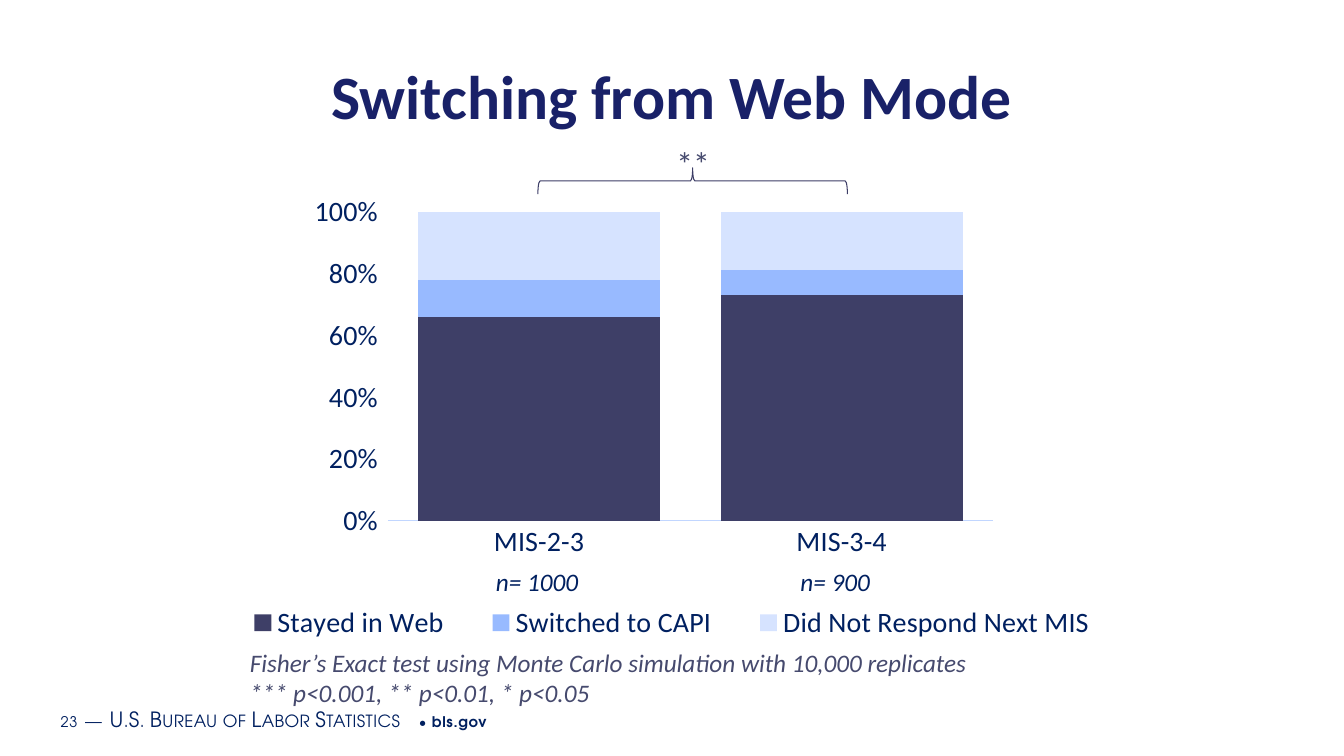
import pptx
import pptx.chart.data
import pptx.dml.color
import pptx.enum.chart
import pptx.enum.shapes
import pptx.enum.text
import pptx.oxml
import pptx.oxml.ns
import pptx.util

RGB = pptx.dml.color.RGBColor
WIDE, HIGH = pptx.util.Inches(13.33), pptx.util.Inches(7.5)
SANS, GEO = "Calibri", "TeX Gyre Adventor"
NAVY = RGB(0x00, 0x20, 0x60)
TITLE = RGB(0x19, 0x21, 0x68)
SLATE = RGB(0x46, 0x4A, 0x6E)
BRACE = RGB(0x3C, 0x3D, 0x66)
AXIS = RGB(0xC1, 0xD6, 0xFF)

CATS = ("MIS-2-3", "MIS-3-4")
SERIES = (
    ("Stayed in Web", (0.66, 0.73), RGB(0x3E, 0x3F, 0x67)),
    ("Switched to CAPI", (0.12, 0.08), RGB(0x98, 0xBA, 0xFF)),
    ("Did Not Respond Next MIS", (0.22, 0.19), RGB(0xD6, 0xE3, 0xFF)),
)


def place(x, y, w, h):
    """Turn percentages of the slide's size into lengths."""
    return (round(WIDE * x / 100), round(HIGH * y / 100),
            round(WIDE * w / 100), round(HIGH * h / 100))


def style(font, size, color=NAVY, face=SANS, bold=False, italic=False):
    font.size = pptx.util.Pt(size)
    font.name = face
    font.color.rgb = color
    font.bold = bold
    font.italic = italic


def write(para, text, small=False, space=0, **form):
    """Add a styled run for each line; small caps and spacing are optional."""
    for i, line in enumerate(text.split("\n")):
        if i:
            para.add_line_break()
        run = para.add_run()
        run.text = line
        style(run.font, **form)
        props = run._r.get_or_add_rPr()
        if small:
            props.set("cap", "small")
        if space:
            props.set("spc", str(round(space * 100)))


def add_box(slide, area):
    """Add an empty text box and return its text frame."""
    frame = slide.shapes.add_textbox(*place(*area)).text_frame
    frame.word_wrap = True
    return frame


def set_title(slide, text):
    title = slide.shapes.title
    title.left, title.top, title.width, title.height = place(4.05, 6.67, 91.9, 11.73)
    frame = title.text_frame
    frame.vertical_anchor = pptx.enum.text.MSO_ANCHOR.MIDDLE
    para = frame.paragraphs[0]
    para.alignment = pptx.enum.text.PP_ALIGN.CENTER
    write(para, text, size=44, color=TITLE, bold=True)


def set_layout(node, x, y, w, h, inner=False):
    """Fix a chart part's place, in shares of the chart."""
    for old in node.findall(pptx.oxml.ns.qn("c:layout")):
        node.remove(old)
    target = '<c:layoutTarget val="inner"/>' if inner else ""
    modes = '<c:xMode val="edge"/><c:yMode val="edge"/>'
    sizes = "".join(f'<c:{k} val="{v}"/>' for k, v in zip("xywh", (x, y, w, h)))
    layout = pptx.oxml.parse_xml(
        f'<c:layout {pptx.oxml.ns.nsdecls("c")}><c:manualLayout>'
        f'{target}{modes}{sizes}</c:manualLayout></c:layout>')
    node.insert(0 if inner else 1, layout)


def add_bars(slide):
    enum = pptx.enum.chart
    data = pptx.chart.data.CategoryChartData(number_format="0%")
    data.categories = CATS
    for name, vals, _ in SERIES:
        data.add_series(name, vals)
    chart = slide.shapes.add_chart(
        enum.XL_CHART_TYPE.COLUMN_STACKED, *place(4.05, 25.73, 91.9, 69.47), data).chart
    style(chart.font, 20)
    chart.has_title = False

    plot = chart.plots[0]
    plot.gap_width, plot.overlap = 25, 100
    plot.vary_by_categories = False
    for bar, (_, _, color) in zip(plot.series, SERIES):
        bar.format.fill.solid()
        bar.format.fill.fore_color.rgb = color

    cat, val = chart.category_axis, chart.value_axis
    for axis in (cat, val):
        style(axis.tick_labels.font, 20)
        axis.has_major_gridlines = False
    cat.major_tick_mark = enum.XL_TICK_MARK.NONE
    cat.format.line.color.rgb = AXIS
    cat.format.line.width = pptx.util.Pt(0.75)
    val.minimum_scale, val.maximum_scale, val.major_unit = 0, 1, 0.2
    val.tick_labels.number_format = "0%"
    val.tick_labels.number_format_is_linked = False
    val.format.line.fill.background()

    chart.has_legend = True
    legend = chart.legend
    legend.position = enum.XL_LEGEND_POSITION.BOTTOM
    legend.include_in_layout = False
    style(legend.font, 20)
    set_layout(legend._element, 0.13, 0.77, 0.74, 0.09)
    set_layout(chart._chartSpace.chart.plotArea, 0.27, 0.03, 0.49, 0.59, inner=True)


def add_counts(slide):
    """Add the sample sizes, one tab stop apart."""
    para = add_box(slide, (36.16, 74.27, 41.4, 7.47)).paragraphs[0]
    stop = round(WIDE * 0.2265)
    para._p.get_or_add_pPr().append(pptx.oxml.parse_xml(
        f'<a:tabLst {pptx.oxml.ns.nsdecls("a")}><a:tab pos="{stop}" algn="l"/></a:tabLst>'))
    write(para, "n= 1000\tn= 900", size=18, italic=True)


def add_brace(slide):
    brace = slide.shapes.add_shape(
        pptx.enum.shapes.MSO_SHAPE.LEFT_BRACE, *place(50.56, 3.47, 1.95, 40.93))
    brace.rotation = 90
    brace.shadow.inherit = False
    brace.fill.background()
    brace.line.color.rgb = BRACE
    brace.line.width = pptx.util.Pt(0.75)


def add_footer(slide):
    frame = add_box(slide, (3.98, 92.4, 63.54, 5.33))
    frame.vertical_anchor = pptx.enum.text.MSO_ANCHOR.MIDDLE
    frame.margin_left = frame.margin_right = pptx.util.Inches(0.07)
    frame.margin_top = frame.margin_bottom = pptx.util.Inches(0.04)
    gap = (" ", dict(size=16, space=0.5))
    caps = dict(size=15, space=0.3, small=True)
    plain = dict(size=10.5, space=0.5)
    runs = (("23", plain), gap, ("—", caps), gap,
            ("U.S. Bureau of Labor Statistics", caps),
            (" • ", plain), ("bls.gov", dict(plain, bold=True)))
    for text, form in runs:
        write(frame.paragraphs[0], text, face=GEO, **form)


def main():
    deck = pptx.Presentation()
    deck.slide_width, deck.slide_height = WIDE, HIGH
    slide = deck.slides.add_slide(deck.slide_layouts.get_by_name("Title Only"))
    add_footer(slide)
    set_title(slide, "Switching from Web Mode")
    add_bars(slide)
    add_counts(slide)
    add_brace(slide)
    stars = add_box(slide, (49.59, 18.27, 7.5, 9.73))
    write(stars.paragraphs[0], "**", size=24, color=SLATE)
    note = add_box(slide, (17.85, 84.93, 60, 13.07))
    write(note.paragraphs[0],
          "Fisher’s Exact test using Monte Carlo simulation with 10,000 replicates\n"
          "*** p<0.001, ** p<0.01, * p<0.05", size=18, color=SLATE, italic=True)
    deck.save("out.pptx")


if __name__ == "__main__":
    main()
